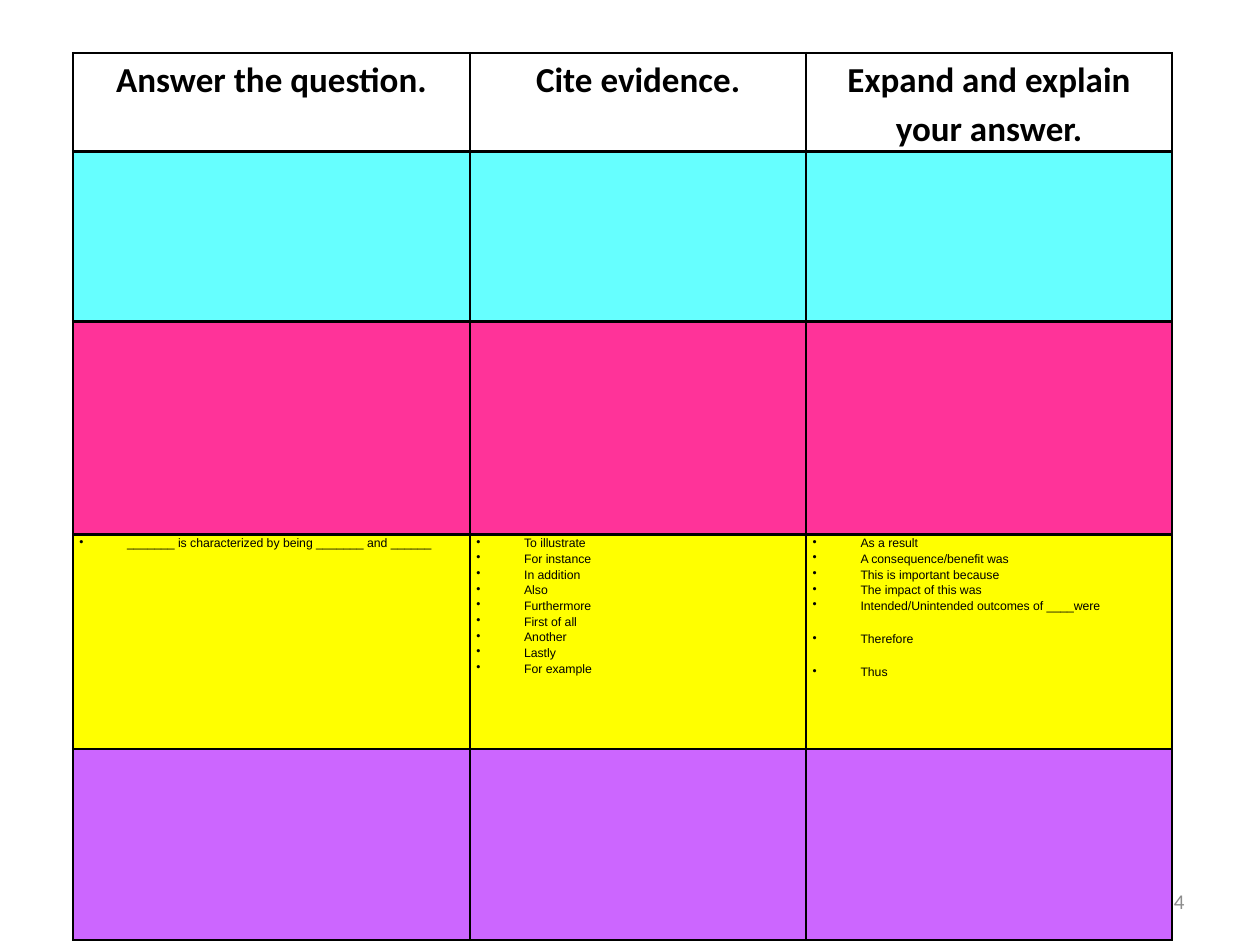
"""Build a slide with a table of sentence starters for written answers."""
import pptx
import pptx.dml.color
import pptx.enum.text
import pptx.oxml.ns
import pptx.util
import lxml.etree
from dataclasses import dataclass
from pptx.util import Inches

Align = pptx.enum.text.PP_ALIGN


@dataclass(frozen=True)
class Theme:
    ink: str = "000000"
    gray: str = "8C8C8C"
    bands: tuple = ("66FFFF", "FF3399", "FFFF00", "CC66FF")
    head: int = 20
    list: int = 7
    page: int = 12
    edge: float = 1.5


theme = Theme()


def write(frame, text, size, font="Calibri", color=theme.ink, bold=False,
          align=Align.LEFT, space=None, bullet=False, gaps=()):
    frame.text = text
    for para in frame.paragraphs:
        para.alignment = align
        para.line_spacing = space
        para.font.size = pptx.util.Pt(size)
        para.font.name = font
        para.font.bold = bold
        para.font.color.rgb = pptx.dml.color.RGBColor.from_string(color)
        if para.text in gaps:
            para.space_after = pptx.util.Pt(10)
        if bullet:
            props = para._p.get_or_add_pPr()
            props.set("marL", str(Inches(0.38)))
            props.set("indent", str(-Inches(0.38)))
            mark = lxml.etree.Element(pptx.oxml.ns.qn("a:buChar"), char="•")
            props.insert_element_before(mark, "a:tabLst", "a:defRPr", "a:extLst")


def border(cell):
    props = cell._tc.get_or_add_tcPr()
    for side in ("lnL", "lnR", "lnT", "lnB"):
        line = lxml.etree.SubElement(props, pptx.oxml.ns.qn("a:" + side),
                                     w=str(pptx.util.Pt(theme.edge)))
        fill = lxml.etree.SubElement(line, pptx.oxml.ns.qn("a:solidFill"))
        lxml.etree.SubElement(fill, pptx.oxml.ns.qn("a:srgbClr"), val=theme.ink)


heads = ["Answer the question.", "Cite evidence.", "Expand and explain your answer."]
starts = [
    ["_______ is characterized by being _______ and ______"],
    ["To illustrate", "For instance", "In addition", "Also", "Furthermore",
     "First of all", "Another", "Lastly", "For example"],
    ["As a result", "A consequence/benefit was", "This is important because",
     "The impact of this was", "Intended/Unintended outcomes of ____were",
     "Therefore", "Thus"],
]
gaps = ("Intended/Unintended outcomes of ____were", "Therefore")
widths = [3.15, 2.67, 2.9]
heights = [0.48, 1.35, 1.69, 1.7, 1.52]

deck = pptx.Presentation()
deck.slide_width, deck.slide_height = Inches(10), Inches(7.5)
slide = deck.slides.add_slide(deck.slide_layouts[6])

grid = slide.shapes.add_table(len(heights), len(widths), Inches(0.58), Inches(0.42),
                              Inches(8.72), Inches(7.02)).table
grid.first_row = grid.horz_banding = False
for col, width in zip(grid.columns, widths):
    col.width = Inches(width)
for row, height in zip(grid.rows, heights):
    row.height = Inches(height)

for r, row in enumerate(grid.rows):
    for c, cell in enumerate(row.cells):
        cell.margin_left = cell.margin_right = Inches(0.05)
        cell.margin_top = cell.margin_bottom = 0
        border(cell)
        if r == 0:
            cell.fill.background()
            write(cell.text_frame, heads[c], theme.head, bold=True,
                  align=Align.CENTER, space=1.15)
        else:
            cell.fill.solid()
            cell.fill.fore_color.rgb = pptx.dml.color.RGBColor.from_string(theme.bands[r - 1])
        if r == 3:
            write(cell.text_frame, "\n".join(starts[c]), theme.list, font="Arial",
                  space=1.15, bullet=True, gaps=gaps)

page = slide.shapes.add_textbox(Inches(7.17), Inches(6.95), Inches(2.33), Inches(0.4))
page.text_frame.word_wrap = True
page.text_frame.vertical_anchor = pptx.enum.text.MSO_ANCHOR.MIDDLE
write(page.text_frame, "4", theme.page, color=theme.gray, align=Align.RIGHT)

deck.save("out.pptx")
